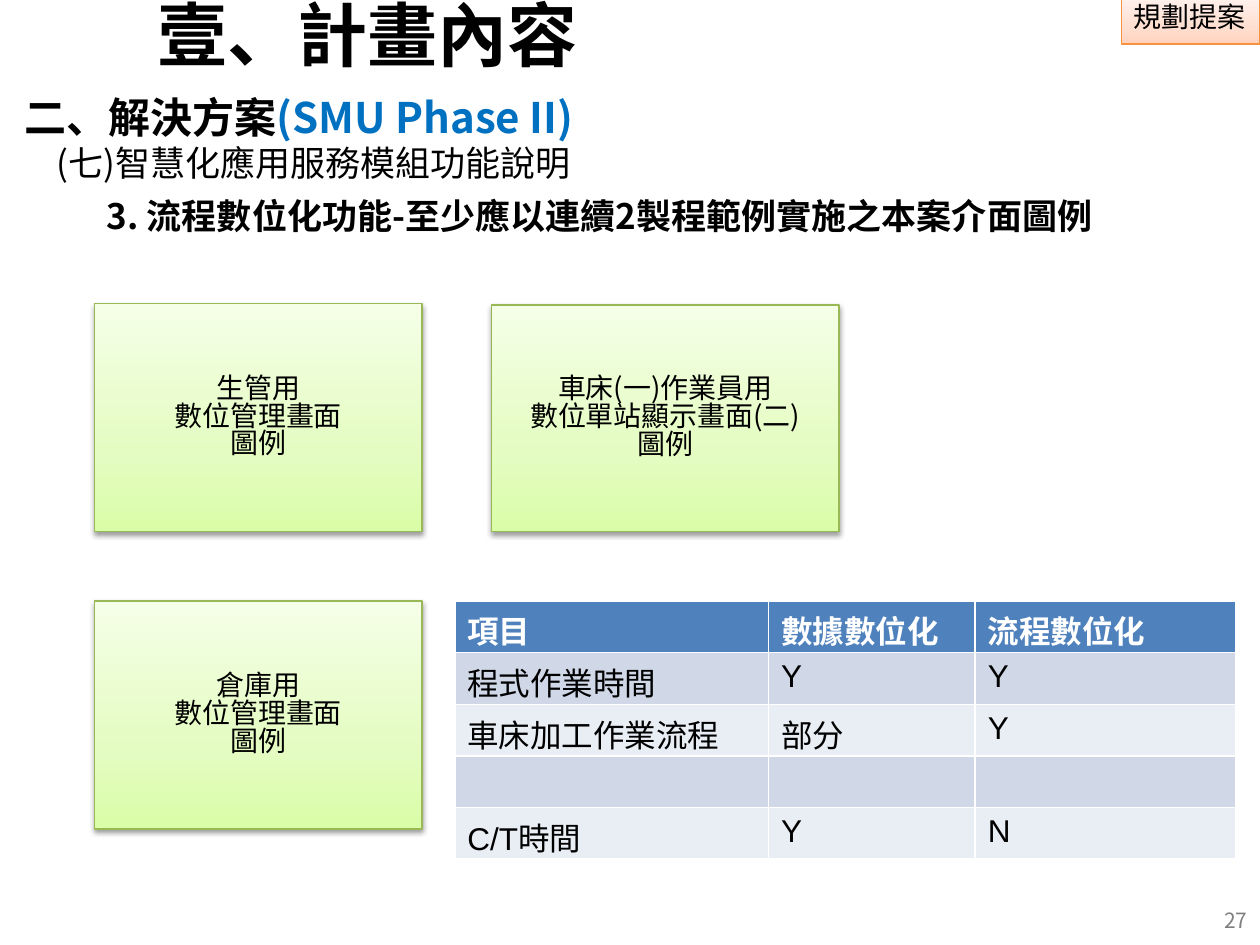
from lxml.etree import SubElement
from pptx import Presentation
from pptx.dml.color import RGBColor
from pptx.enum.shapes import MSO_SHAPE
from pptx.enum.text import MSO_ANCHOR, PP_ALIGN
from pptx.oxml import parse_xml
from pptx.oxml.ns import nsdecls, qn
from pptx.util import Inches, Pt

COLORS = {
    "text": "000000", "accent": "0070C0", "number": "7F7F7F",
    "header": "4F81BD", "header text": "FFFFFF", "odd": "D0D8E8", "even": "E9EDF4",
    "green line": "98B955", "orange line": "F69240",
}
GREEN = ["DAFDA7", "E4FCC2", "F5FFE7"]
ORANGE = ["FFD2BD", "FFDED0", "FFF2ED"]
ROWS = [
    ["項目", "數據數位化", "流程數位化"],
    ["程式作業時間", "Y", "Y"],
    ["車床加工作業流程", "部分", "Y"],
    ["", "", ""],
    ["C/T時間", "Y", "N"],
]


def color(name):
    return RGBColor.from_string(COLORS[name])


class SlideBuilder:
    font = "Noto Sans CJK SC"

    def __init__(self, page):
        self.page = page

    def style(self, para, size, tint="text", bold=False, align=PP_ALIGN.LEFT,
              spacing=0.9, font=None):
        para.alignment = align
        para.line_spacing = spacing
        para.font.size = Pt(size)
        para.font.bold = bold
        para.font.color.rgb = color(tint)
        para.font.name = font or self.font
        if not font:
            defaults = para._p.pPr.find(qn("a:defRPr"))
            SubElement(defaults, qn("a:ea")).set("typeface", self.font)

    def title(self, text, left, top, width, height):
        title = self.page.shapes.title
        title.left, title.top = Inches(left), Inches(top)
        title.width, title.height = Inches(width), Inches(height)
        title.text_frame.text = text
        title.text_frame.vertical_anchor = MSO_ANCHOR.TOP
        self.style(title.text_frame.paragraphs[0], 40, bold=True, align=PP_ALIGN.CENTER)

    def text(self, spans, left, top, width, height, size, indent=0,
             anchor=MSO_ANCHOR.TOP, **look):
        """Add a one-paragraph box; spans are (text, colour name or None) pairs."""
        box = self.page.shapes.add_textbox(
            Inches(left), Inches(top), Inches(width), Inches(height))
        box.text_frame.word_wrap = True
        box.text_frame.vertical_anchor = anchor
        para = box.text_frame.paragraphs[0]
        if indent:
            para._p.get_or_add_pPr().set("marL", str(Inches(indent)))
        self.style(para, size, **look)
        for words, tint in spans:
            span = para.add_run()
            span.text = words
            if tint:
                span.font.color.rgb = color(tint)

    def panel(self, lines, left, top, width, height, stops, line,
              align=PP_ALIGN.CENTER, anchor=MSO_ANCHOR.MIDDLE, spacing=0.83,
              wrap=True, shadow=True):
        box = self.page.shapes.add_shape(
            MSO_SHAPE.RECTANGLE, Inches(left), Inches(top), Inches(width), Inches(height))
        box.shadow.inherit = False
        box.line.color.rgb = color(line)
        box.line.width = Pt(0.75)
        self.gradient(box, stops)
        if shadow:
            self.drop_shadow(box)
        frame = box.text_frame
        frame.word_wrap = wrap
        frame.vertical_anchor = anchor
        frame.text = "\n".join(lines)
        for para in frame.paragraphs:
            self.style(para, 16, align=align, spacing=spacing)

    def gradient(self, box, stops):
        """Fill upwards through three colours."""
        marks = "".join(
            f'<a:gs pos="{place * 1000}"><a:srgbClr val="{tint}"/></a:gs>'
            for place, tint in zip([0, 35, 100], stops))
        fill = parse_xml(
            f'<a:gradFill {nsdecls("a")} rotWithShape="1"><a:gsLst>{marks}</a:gsLst>'
            '<a:lin ang="16200000" scaled="0"/></a:gradFill>')
        box._element.spPr.find(qn("a:prstGeom")).addnext(fill)

    def drop_shadow(self, box):
        effects = box._element.spPr.find(qn("a:effectLst"))
        effects.append(parse_xml(
            f'<a:outerShdw {nsdecls("a")} blurRad="{Pt(3.1)}" dist="{Pt(1.6)}" '
            'dir="5400000" rotWithShape="0"><a:srgbClr val="000000">'
            '<a:alpha val="38000"/></a:srgbClr></a:outerShdw>'))

    def table(self, rows, left, top, widths, row_height):
        table = self.page.shapes.add_table(
            len(rows), len(widths), Inches(left), Inches(top),
            Inches(sum(widths)), Inches(row_height * len(rows))).table
        for column, width in zip(table.columns, widths):
            column.width = Inches(width)
        for r, row in enumerate(rows):
            table.rows[r].height = Inches(row_height)
            band = "header" if r == 0 else "odd" if r % 2 else "even"
            for c, words in enumerate(row):
                cell = table.cell(r, c)
                cell.text = words
                cell.margin_bottom = 0
                cell.fill.solid()
                cell.fill.fore_color.rgb = color(band)
                self.style(cell.text_frame.paragraphs[0], 18,
                           "header text" if r == 0 else "text",
                           bold=r == 0, spacing=1.0, font="Arial")


def main():
    deck = Presentation()
    deck.slide_width, deck.slide_height = Inches(10), Inches(7.5)
    slide = SlideBuilder(deck.slides.add_slide(deck.slide_layouts[5]))

    slide.panel(["規劃提案"], 8.9, -0.02, 1.1, 0.37, ORANGE, "orange line",
                align=PP_ALIGN.LEFT, anchor=MSO_ANCHOR.TOP, spacing=0.9,
                wrap=False, shadow=False)
    slide.text([("27", None)], 9.25, 7.16, 0.75, 0.32, 12, tint="number",
               align=PP_ALIGN.RIGHT, anchor=MSO_ANCHOR.MIDDLE, spacing=Pt(12))

    screens = [
        (["生管用", "數位管理畫面", "圖例"], 0.75, 2.41, 2.6, 1.81),
        (["車床(一)作業員用", "數位單站顯示畫面(二)", "圖例"], 3.9, 2.42, 2.76, 1.8),
        (["倉庫用", "數位管理畫面", "圖例"], 0.75, 4.77, 2.6, 1.81),
    ]
    for lines, *place in screens:
        slide.panel(lines, *place, GREEN, "green line")

    slide.text([("3. 流程數位化功能-至少應以連續2製程範例實施之本案介面圖例", None)],
               0.75, 1.54, 8.03, 0.44, 20, bold=True, spacing=0.87)
    slide.text([("(七)智慧化應用服務模組功能說明", None)],
               -0.05, 1.11, 6.69, 0.44, 20, indent=0.4)
    slide.table(ROWS, 3.61, 4.77, [2.49, 1.64, 2.07], 0.41)
    slide.title("壹、計畫內容", -0.43, -0.04, 6.69, 0.68)
    slide.text([(" 二、解決方案", None), ("(SMU Phase II)", "accent")],
               0.02, 0.72, 6.69, 0.5, 24, bold=True)
    deck.save("out.pptx")


if __name__ == "__main__":
    main()
